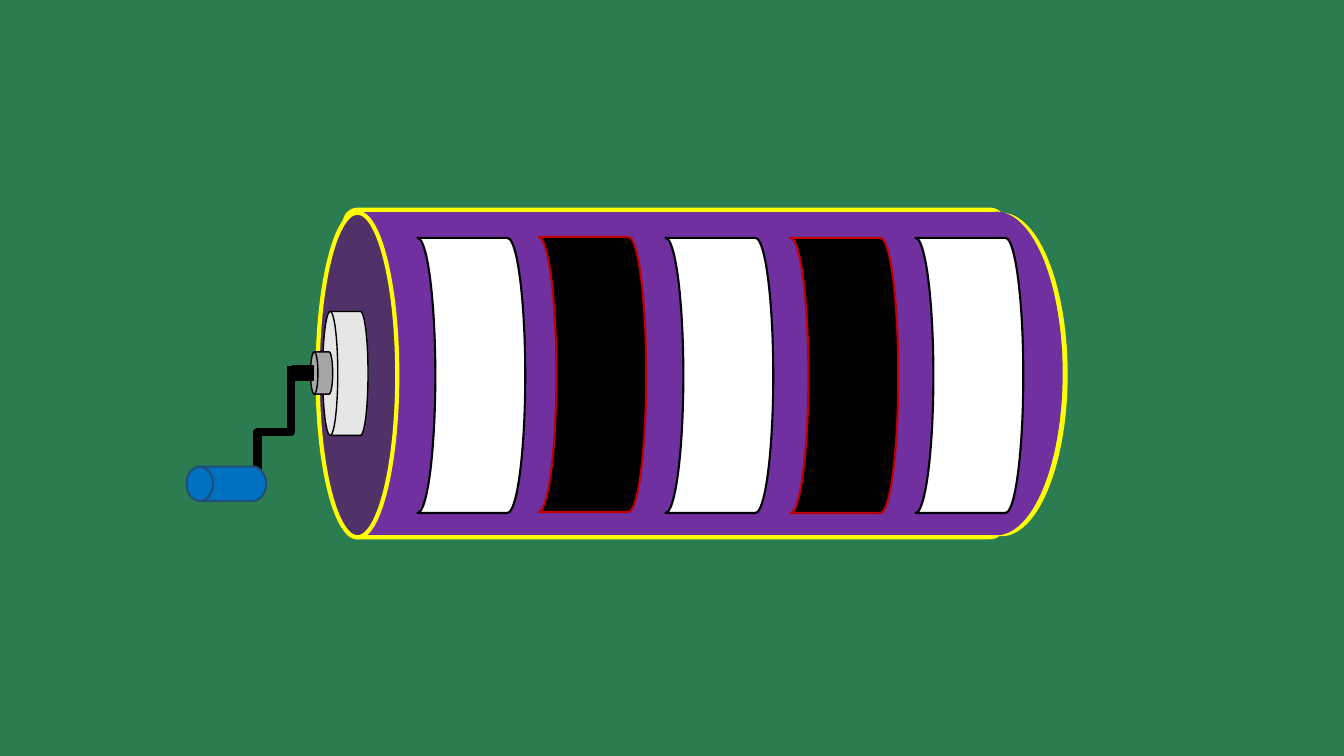
from lxml.etree import SubElement
from pptx import Presentation
from pptx.dml.color import RGBColor
from pptx.enum.shapes import MSO_CONNECTOR as LINK, MSO_SHAPE as SHAPE
from pptx.oxml.ns import qn
from pptx.util import Inches, Pt

GREEN = RGBColor(0x2C, 0x7C, 0x52)
YELLOW = RGBColor(0xFF, 0xFF, 0x00)
PURPLE = RGBColor(0x70, 0x30, 0xA0)
DARK_PURPLE = RGBColor(0x50, 0x32, 0x68)
LIGHT_GRAY = RGBColor(0xE7, 0xE6, 0xE6)
GRAY = RGBColor(0xA6, 0xA6, 0xA6)
BLACK = RGBColor(0x00, 0x00, 0x00)
WHITE = RGBColor(0xFF, 0xFF, 0xFF)
RED = RGBColor(0xC0, 0x00, 0x00)
BLUE = RGBColor(0x00, 0x70, 0xC0)
NAVY = RGBColor(0x1F, 0x4E, 0x79)

deck = Presentation()
deck.slide_width = Inches(13.33)
deck.slide_height = Inches(7.5)
COLUMN = deck.slide_width / 133.3
ROW = deck.slide_height / 75

page = deck.slides.add_slide(deck.slide_layouts[6])
page.background.fill.solid()
page.background.fill.fore_color.rgb = GREEN


def place(kind, column, row, columns, rows, fill, line=None, weight=1):
    shape = page.shapes.add_shape(
        kind, round(column * COLUMN), round(row * ROW),
        round(columns * COLUMN), round(rows * ROW))
    shape.shadow.inherit = False
    shape.fill.solid()
    shape.fill.fore_color.rgb = fill
    if line is None:
        shape.line.fill.background()
    else:
        shape.line.color.rgb = line
        shape.line.width = Pt(weight)
    return shape


def place_flipped(*details):
    shape = place(*details)
    shape.element.spPr.find(qn("a:xfrm")).set("flipH", "1")


DRUM = SHAPE.FLOWCHART_DIRECT_ACCESS_STORAGE
STRIPE = SHAPE.FLOWCHART_STORED_DATA

place(SHAPE.OVAL, 92.8, 21.1, 13.1, 32.1, YELLOW)
barrel = place(SHAPE.ROUNDED_RECTANGLE, 34.2, 20.8, 65.3, 32.5, PURPLE, YELLOW, 3)
barrel.adjustments[0] = 0.04
place(SHAPE.OVAL, 31.5, 21.1, 7.9, 32.2, DARK_PURPLE, YELLOW, 3)
place_flipped(DRUM, 32, 30.9, 4.5, 12.3, LIGHT_GRAY, BLACK)
place(SHAPE.OVAL, 92.3, 21, 13.1, 32.1, PURPLE)
place_flipped(DRUM, 30.8, 34.9, 2.2, 4.2, GRAY, BLACK)
place(SHAPE.RECTANGLE, 29, 36.3, 2.1, 1.4, BLACK, BLACK)

for column, row, fill, line in (
    (41.4, 23.6, WHITE, BLACK),
    (53.4, 23.5, BLACK, RED),
    (66, 23.6, WHITE, BLACK),
    (78.4, 23.6, BLACK, RED),
    (90.8, 23.6, WHITE, BLACK),
):
    place_flipped(STRIPE, column, row, 10.7, 27.3, fill, line, 1.5)

crank = page.shapes.add_connector(
    LINK.ELBOW, round(20.7 * COLUMN), round(41.2 * ROW),
    round(33.7 * COLUMN), round(44.5 * ROW))
crank.line.color.rgb = BLACK
crank.line.width = Pt(6)
crank_format = crank.element.spPr
crank_format.find(qn("a:xfrm")).set("rot", str(90 * 60000))
SubElement(crank_format, qn("a:effectLst"))

place_flipped(DRUM, 18.5, 46.3, 7.9, 3.4, BLUE, NAVY, 1.5)

deck.save("out.pptx")
